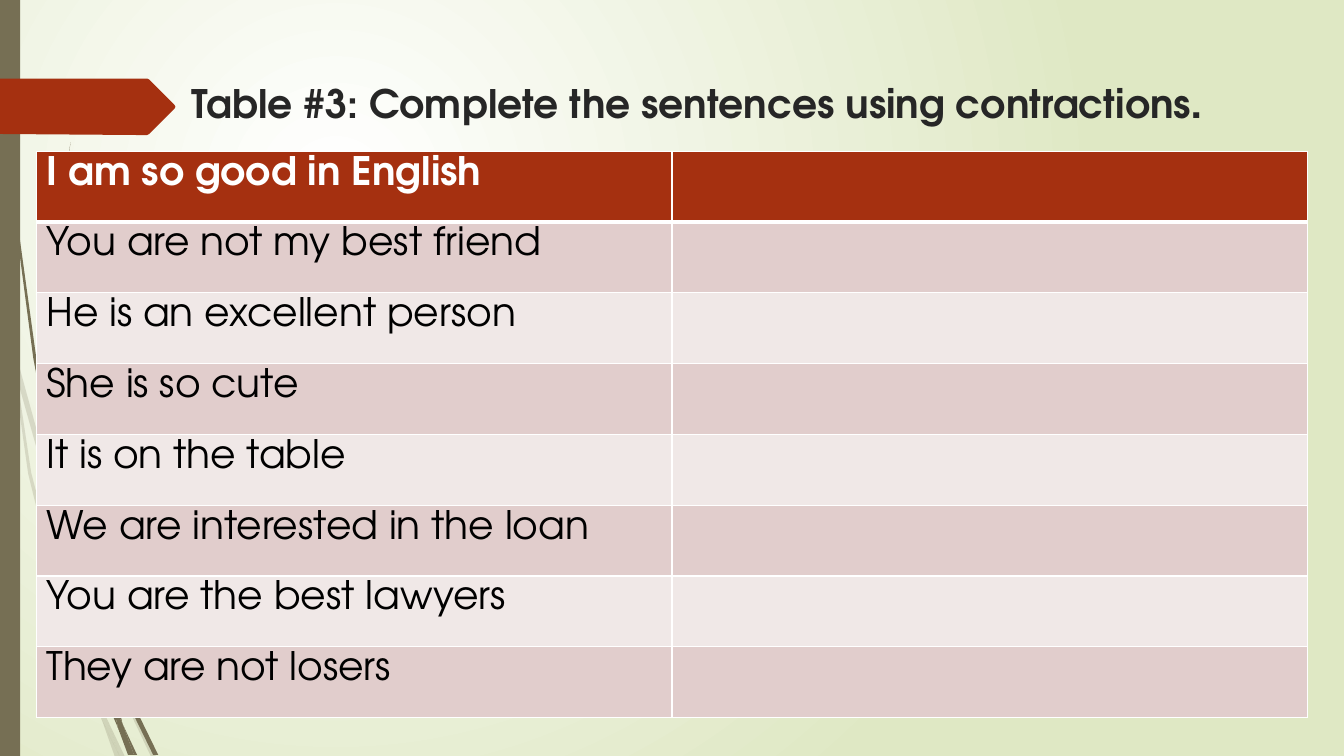
"""Build a slide with a table of sentences to rewrite using contractions."""
from lxml.etree import SubElement
from pptx import Presentation
from pptx.dml.color import RGBColor
from pptx.enum.shapes import MSO_SHAPE
from pptx.enum.text import MSO_ANCHOR
from pptx.oxml import parse_xml
from pptx.oxml.ns import nsdecls, qn
from pptx.util import Pt

PX = 9144
FONT = "TeX Gyre Adventor"
OLIVE, RUST, WHITE = "766F54", "A53010", "FFFFFF"


def color(value):
    return RGBColor.from_string(value)


def write(paragraph, text, size=28, fill="000000", bold=False):
    run = paragraph.add_run()
    run.text = text
    run.font.name = FONT
    run.font.size = Pt(size)
    run.font.bold = bold
    run.font.color.rgb = color(fill)


presentation = Presentation()
presentation.slide_width = 1333 * PX
presentation.slide_height = 750 * PX
slide = presentation.slides.add_slide(presentation.slide_layouts[6])

background = slide.background.fill
background.gradient()
for stop, value in zip(background.gradient_stops, (WHITE, "DFE8C4")):
    stop.color.rgb = color(value)
gradient = slide.background._cSld.find(".//" + qn("a:gradFill"))
gradient.remove(gradient.find(qn("a:lin")))
gradient.append(parse_xml(
    f'<a:path {nsdecls("a")} path="circle">'
    '<a:fillToRect l="50000" t="50000" r="100000" b="100000"/></a:path>'))

pale_wisps = [
    [(11, 350), (9, 322), (0, 282), (0, 299), (10, 344)],
    [(58, 522), (84, 599), (85, 586), (62, 520), (14, 345), (17, 376)],
    [(92, 607), (88, 596), (88, 610), (123, 694), (150, 751), (155, 751), (127, 692)],
    [(119, 751), (124, 751), (105, 711)],
    [(93, 683), (70, 619), (31, 469), (17, 376), (11, 350), (28, 470), (65, 621),
     (92, 693), (101, 714), (99, 707)],
    [(84, 599), (87, 646), (93, 683), (96, 692), (105, 711), (103, 706), (91, 646),
     (88, 610), (88, 608)],
    [(88, 584), (110, 462), (160, 349), (229, 245), (268, 198), (290, 175), (312, 154),
     (312, 153), (289, 175), (268, 197), (228, 244), (158, 348), (107, 461), (85, 584),
     (85, 586), (88, 596)],
    [(101, 714), (114, 751), (119, 751)],
    [(88, 608), (88, 610), (88, 596), (85, 586), (84, 599)],
    [(96, 692), (93, 683), (99, 707), (101, 714), (119, 751), (105, 711)],
]
dark_wisps = [
    [(7, 110), (17, 233), (33, 355), (56, 477), (57, 481), (55, 457), (55, 453),
     (36, 355), (19, 232), (8, 109), (5, 48), (4, 0), (3, 0), (4, 48)],
    [(88, 592), (106, 645), (106, 633), (106, 631), (93, 590), (60, 472), (64, 505)],
    [(113, 649), (110, 641), (111, 656), (132, 708), (152, 749), (157, 749), (136, 706)],
    [(110, 691), (98, 657), (72, 556), (64, 505), (57, 477), (68, 557), (93, 659),
     (111, 708), (117, 722), (116, 717)],
    [(60, 472), (58, 453), (54, 349), (58, 245), (63, 193), (70, 141), (62, 193),
     (56, 245), (52, 349), (55, 449)],
    [(133, 749), (136, 749), (122, 719)],
    [(57, 477), (64, 505), (60, 472), (55, 449), (55, 453)],
    [(111, 633), (125, 552), (158, 476), (205, 406), (231, 374), (245, 359), (261, 344),
     (260, 344), (245, 358), (231, 373), (204, 405), (156, 474), (122, 551), (106, 631),
     (110, 641)],
    [(117, 722), (127, 749), (131, 749)],
    [(106, 645), (110, 691), (116, 706), (122, 719), (121, 716), (111, 656), (109, 651)],
    [(106, 645), (109, 651), (111, 656), (110, 641), (106, 631), (106, 633)],
    [(116, 706), (110, 691), (116, 717), (117, 722), (130, 749), (133, 749), (122, 719)],
]
title_arrow = [(173, 108), (148, 133), (146, 134), (136, 134), (0, 133), (0, 78),
               (146, 78), (148, 79), (173, 104), (174, 106)]

side_bar = slide.shapes.add_shape(MSO_SHAPE.RECTANGLE, 0, 0, 20 * PX, 750 * PX)
side_bar.shadow.inherit = False
side_bar.fill.solid()
side_bar.fill.fore_color.rgb = color(OLIVE)
side_bar.line.fill.background()

for outlines, fill, opacity in ((pale_wisps, OLIVE, 20), (dark_wisps, OLIVE, 100),
                                ([title_arrow], RUST, 100)):
    for start, *others in outlines:
        builder = slide.shapes.build_freeform(*start, scale=PX)
        builder.add_line_segments(others, close=True)
        shape = builder.convert_to_shape()
        shape.shadow.inherit = False
        shape.fill.solid()
        shape.fill.fore_color.rgb = color(fill)
        shape.line.fill.background()
        if opacity < 100:
            solid = shape._element.spPr.find(qn("a:solidFill"))
            SubElement(solid[0], qn("a:alpha"), val=str(opacity * 1000))
    if outlines is dark_wisps:
        slide.shapes._spTree.append(side_bar._element)

title = slide.shapes.add_textbox(180 * PX, 68 * PX, 1078 * PX, 97 * PX).text_frame
title.word_wrap = True
title.vertical_anchor = MSO_ANCHOR.TOP
write(title.paragraphs[0], "Table #3: Complete the sentences using contractions",
      fill="262626", bold=True)
write(title.paragraphs[0], ".", size=32, fill="262626", bold=True)

sentences = [
    "I am so good in English",
    "You are not my best friend",
    "He is an excellent person",
    "She is so cute",
    "It is on the table",
    "We are interested in the loan",
    "You are the best lawyers",
    "They are not losers",
]
table = slide.shapes.add_table(len(sentences), 2, 36 * PX, 150 * PX,
                               1261 * PX, 562 * PX).table
for row, sentence in enumerate(sentences):
    header = row == 0
    for column, text in enumerate((sentence, "")):
        cell = table.cell(row, column)
        cell.margin_left = cell.margin_right = 10 * PX
        cell.margin_top = cell.margin_bottom = 5 * PX
        for side in ("lnL", "lnR", "lnT", "lnB"):
            thick = (header and side == "lnB") or (row == 1 and side == "lnT")
            border = SubElement(cell._tc.get_or_add_tcPr(), qn(f"a:{side}"),
                                w=str(Pt(3 if thick else 1)))
            SubElement(SubElement(border, qn("a:solidFill")), qn("a:srgbClr"), val=WHITE)
        cell.fill.solid()
        cell.fill.fore_color.rgb = color(RUST if header else ("F0E8E7", "E1CDCC")[row % 2])
        if text:
            write(cell.text_frame.paragraphs[0], text,
                  fill=WHITE if header else "000000", bold=header)

presentation.save("out.pptx")
